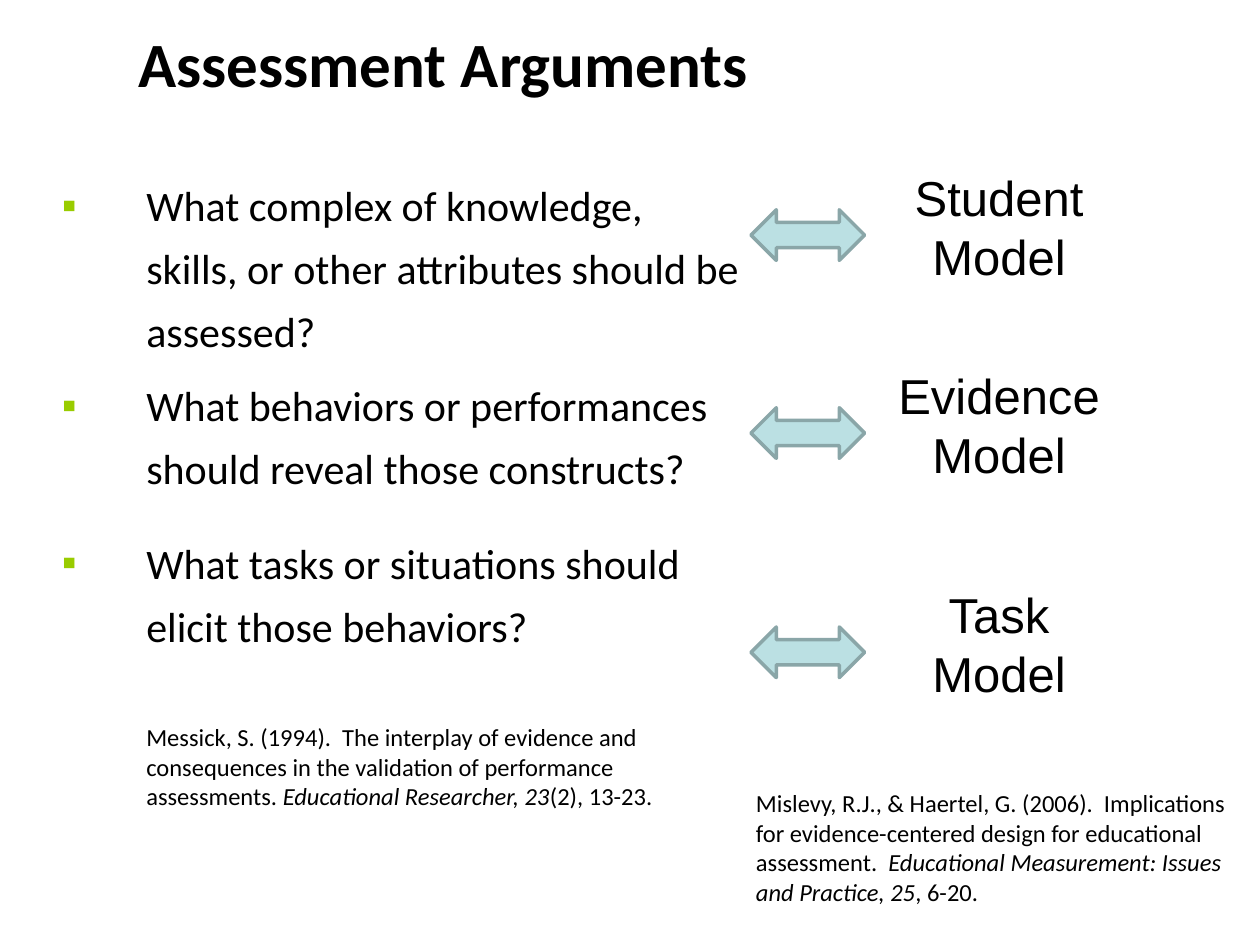
from lxml.etree import SubElement
from pptx import Presentation
from pptx.dml.color import RGBColor
from pptx.enum.shapes import MSO_SHAPE as Shape
from pptx.enum.text import MSO_ANCHOR as Anchor, MSO_AUTO_SIZE as AutoSize, PP_ALIGN as Align
from pptx.oxml.ns import qn
from pptx.util import Cm, Pt

QUESTIONS = [
    ("What complex of knowledge, skills, or other attributes should be assessed?", 0),
    ("What behaviors or performances should reveal those constructs?", 6),
    ("What tasks or situations should elicit those behaviors?", 18),
]
MESSICK = [
    ("Messick, S. (1994).  The interplay of evidence and consequences in the "
     "validation of performance assessments. ", False),
    ("Educational Researcher, 23", True),
    ("(2), 13-23.", False),
]
MISLEVY = [
    ("Mislevy, R.J., & Haertel, G. (2006).  Implications for evidence-centered "
     "design for educational assessment.  ", False),
    ("Educational Measurement: Issues and Practice, 25", True),
    (", 6-20.", False),
]
MODELS = [("Student", 3.25, 3.96), ("Evidence", 7.24, 4.62), ("Task", 11.66, 3.23)]


def color(hex_string):
    """Return the colour for a hex string."""
    return RGBColor.from_string(hex_string)


def add_run(paragraph, text, size, font="Calibri", bold=None, italic=None):
    """Add one formatted black run and return it."""
    run = paragraph.add_run()
    run.text = text
    run.font.size = Pt(size)
    run.font.name = font
    run.font.bold = bold
    run.font.italic = italic
    run.font.color.rgb = color("000000")
    return run


def add_citation(paragraph, parts):
    """Add the upright and italic runs of a reference."""
    for text, italic in parts:
        add_run(paragraph, text, 14, italic=italic)


def add_frame(slide, left, top, width, height, wrap=True):
    """Add a text box in centimetres and return its text frame."""
    frame = slide.shapes.add_textbox(Cm(left), Cm(top), Cm(width), Cm(height)).text_frame
    frame.word_wrap = wrap
    return frame


def next_paragraph(frame, index):
    """Return the first paragraph for index zero, else a new one."""
    return frame.add_paragraph() if index else frame.paragraphs[0]


def set_indent(paragraph, left, first):
    """Set the left margin and first-line indent in centimetres."""
    properties = paragraph._p.get_or_add_pPr()
    properties.set("marL", str(Cm(left)))
    properties.set("indent", str(Cm(first)))
    return properties


def add_bullet(paragraph):
    """Give a paragraph a hanging green square bullet."""
    properties = set_indent(paragraph, 1.7, -1.7)
    bullet_color = SubElement(properties, qn("a:buClr"))
    SubElement(bullet_color, qn("a:srgbClr"), val="99CC00")
    SubElement(properties, qn("a:buFont"), typeface="Arial")
    SubElement(properties, qn("a:buChar"), char="▪")


def add_text_shadow(run):
    """Put a thin yellow-green shadow behind a run."""
    fill = run.font._element.find(qn("a:solidFill"))
    effects = SubElement(run.font._element, qn("a:effectLst"))
    fill.addnext(effects)
    shadow = SubElement(effects, qn("a:outerShdw"), dist=str(Pt(2)), dir="2700000", algn="tl")
    SubElement(shadow, qn("a:srgbClr"), val="D9E87A")


def place_title(slide, left, top, width, height):
    """Move and fill the title placeholder."""
    title = slide.shapes.title
    title.left, title.top, title.width, title.height = map(Cm, (left, top, width, height))
    frame = title.text_frame
    frame.vertical_anchor = Anchor.MIDDLE
    paragraph = frame.paragraphs[0]
    paragraph.alignment = Align.LEFT
    add_text_shadow(add_run(paragraph, "Assessment Arguments", 36, bold=True))


def add_questions(slide, left, top, width, height):
    """Add the bulleted questions and their reference."""
    frame = add_frame(slide, left, top, width, height)
    for index, (question, space) in enumerate(QUESTIONS):
        paragraph = next_paragraph(frame, index)
        add_bullet(paragraph)
        paragraph.line_spacing = Pt(36)
        paragraph.space_before = Pt(space)
        add_run(paragraph, question, 24)
    citation = frame.add_paragraph()
    set_indent(citation, 1.7, 0)
    citation.space_before = Pt(41)
    add_citation(citation, MESSICK)


def add_model(slide, left, top, name, label_width):
    """Add a double arrow and the two-line model name to its right."""
    label_left = left + 5 - label_width / 2
    frame = add_frame(slide, label_left, top, label_width, 2.64, wrap=False)
    frame.auto_size = AutoSize.SHAPE_TO_FIT_TEXT
    for index, word in enumerate((name, "Model")):
        paragraph = next_paragraph(frame, index)
        paragraph.alignment = Align.CENTER
        add_run(paragraph, word, 28, font="Arial")
    arrow = slide.shapes.add_shape(
        Shape.LEFT_RIGHT_ARROW, Cm(left), Cm(top + 0.98), Cm(2.29), Cm(1.02))
    arrow.shadow.inherit = False
    arrow.fill.solid()
    arrow.fill.fore_color.rgb = color("BBE0E3")
    arrow.line.color.rgb = color("8AA6A8")
    arrow.line.width = Pt(2)


def add_reference(slide, left, top, width, height):
    """Add the reference for the three models."""
    frame = add_frame(slide, left, top, width, height)
    frame.auto_size = AutoSize.SHAPE_TO_FIT_TEXT
    add_citation(frame.paragraphs[0], MISLEVY)


def main():
    """Build and save the presentation."""
    presentation = Presentation()
    presentation.slide_width, presentation.slide_height = Cm(25.4), Cm(19.05)
    slide = presentation.slides.add_slide(presentation.slide_layouts[5])
    place_title(slide, 2.54, 0.2, 21.8, 2.1)
    add_questions(slide, 1, 3.25, 14.22, 11.43)
    for name, top, label_width in MODELS:
        add_model(slide, 15.14, top, name, label_width)
    add_reference(slide, 14.99, 15.77, 10.41, 2.64)
    presentation.save("out.pptx")


if __name__ == "__main__":
    main()
